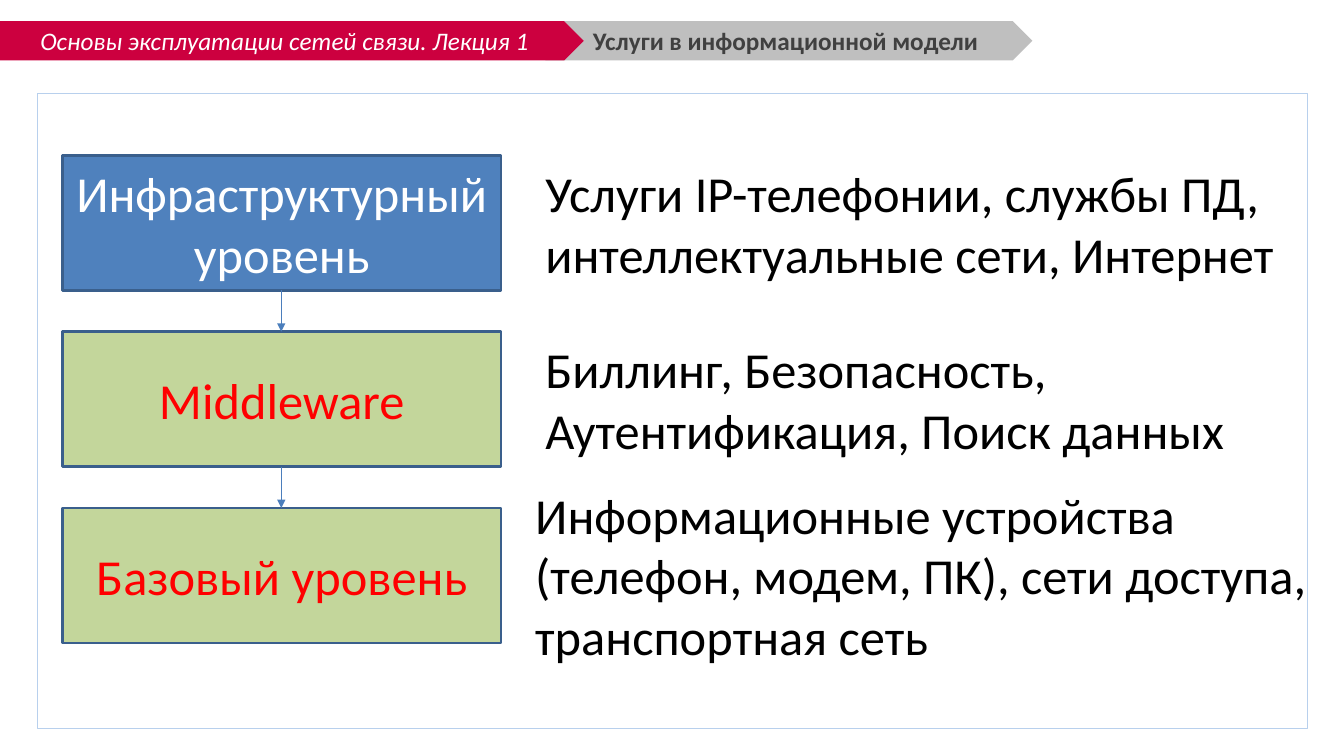
from lxml import etree
from pptx import Presentation
from pptx.dml.color import RGBColor
from pptx.enum.shapes import MSO_CONNECTOR, MSO_SHAPE
from pptx.enum.text import MSO_ANCHOR, MSO_AUTO_SIZE, PP_ALIGN
from pptx.oxml.ns import qn
from pptx.util import Pt

LEFT, CENTER = PP_ALIGN.LEFT, PP_ALIGN.CENTER
TOP, MIDDLE = MSO_ANCHOR.TOP, MSO_ANCHOR.MIDDLE
RECT, PENTAGON = MSO_SHAPE.RECTANGLE, MSO_SHAPE.PENTAGON
STRAIGHT = MSO_CONNECTOR.STRAIGHT
NO_AUTOFIT = MSO_AUTO_SIZE.NONE

COURSE = "Основы эксплуатации сетей связи. Лекция 1"
TITLE = "Услуги в информационной модели"
LEVELS = [
    ("Инфраструктурный уровень", "blue", "white",
     "Услуги IP-телефонии, службы ПД, интеллектуальные сети, Интернет",
     (531, 156, 802, 131)),
    ("Middleware", "green", "red",
     "Биллинг, Безопасность, Аутентификация, Поиск данных",
     (531, 331, 805, 131)),
    ("Базовый уровень", "green", "red",
     "Информационные устройства (телефон, модем, ПК), сети доступа, "
     "транспортная сеть",
     (521, 475, 822, 192)),
]
COLORS = {
    "white": "FFFFFF", "black": "000000", "red": "FF0000",
    "crimson": "CC003F", "gray": "BFBFBF", "dark": "404040",
    "blue": "4F81BD", "green": "C3D69B", "border": "3A5F8C",
    "arrow": "4B7EBC", "frame": "B8D0ED",
}
FONT = "Calibri"
PX = 9144
SLIDE_W, SLIDE_H = 1333, 750
BANNER_Y, BANNER_H = 21, 39
BOX_X, BOX_Y, BOX_W, BOX_H, BOX_STEP = 62, 154, 435, 134, 175


def px(*values):
    return [v * PX for v in values]


def rgb(name):
    return RGBColor.from_string(COLORS[name])


def write(sp, text, size, color, align=LEFT, anchor=TOP, bold=False, italic=False):
    tf = sp.text_frame
    tf.text = text
    tf.word_wrap = True
    tf.auto_size = NO_AUTOFIT
    tf.vertical_anchor = anchor
    p = tf.paragraphs[0]
    p.alignment = align
    font = p.runs[0].font
    font.name, font.size = FONT, Pt(size)
    font.bold, font.italic = bold, italic
    font.color.rgb = rgb(color)


def add_shape(slide, kind, box, fill=None, line=None, width=0):
    sp = slide.shapes.add_shape(kind, *px(*box))
    sp.shadow.inherit = False
    if fill:
        sp.fill.solid()
        sp.fill.fore_color.rgb = rgb(fill)
    else:
        sp.fill.background()
    if line:
        sp.line.color.rgb = rgb(line)
        sp.line.width = Pt(width)
    else:
        sp.line.fill.background()
    return sp


def add_arrow(slide, x, y1, y2):
    cxn = slide.shapes.add_connector(STRAIGHT, *px(x, y1, x, y2))
    cxn.line.color.rgb = rgb("arrow")
    cxn.line.width = Pt(0.75)
    etree.SubElement(cxn.line._get_or_add_ln(), qn("a:tailEnd"), type="triangle")
    etree.SubElement(cxn._element.spPr, qn("a:effectLst"))


def add_header(slide):
    add_shape(slide, PENTAGON, (541, BANNER_Y, 483, BANNER_H), "gray")
    add_shape(slide, RECT, (37, 92, 1260, 630), line="frame", width=0.25)
    sp = add_shape(slide, PENTAGON, (-5, BANNER_Y, 584, BANNER_H), "crimson")
    write(sp, COURSE, 18, "white", CENTER, MIDDLE, italic=True)

    title = slide.shapes.title
    title.left, title.top, title.width, title.height = px(578, BANNER_Y, 414, BANNER_H)
    write(title, TITLE, 18, "dark", LEFT, MIDDLE, bold=True)
    title._element.getparent().append(title._element)


def add_levels(slide):
    for i, (name, fill, color, services, services_box) in enumerate(LEVELS):
        y = BOX_Y + i * BOX_STEP
        sp = add_shape(slide, RECT, (BOX_X, y, BOX_W, BOX_H), fill, "border", 2)
        write(sp, name, 36, color, CENTER, MIDDLE)
        if i:
            add_arrow(slide, BOX_X + BOX_W // 2, y - BOX_STEP + BOX_H, y)
        tb = slide.shapes.add_textbox(*px(*services_box))
        write(tb, services, 36, "black")


def main():
    prs = Presentation()
    prs.slide_width, prs.slide_height = px(SLIDE_W, SLIDE_H)
    slide = prs.slides.add_slide(prs.slide_layouts[5])
    add_header(slide)
    add_levels(slide)
    prs.save("out.pptx")


if __name__ == "__main__":
    main()
